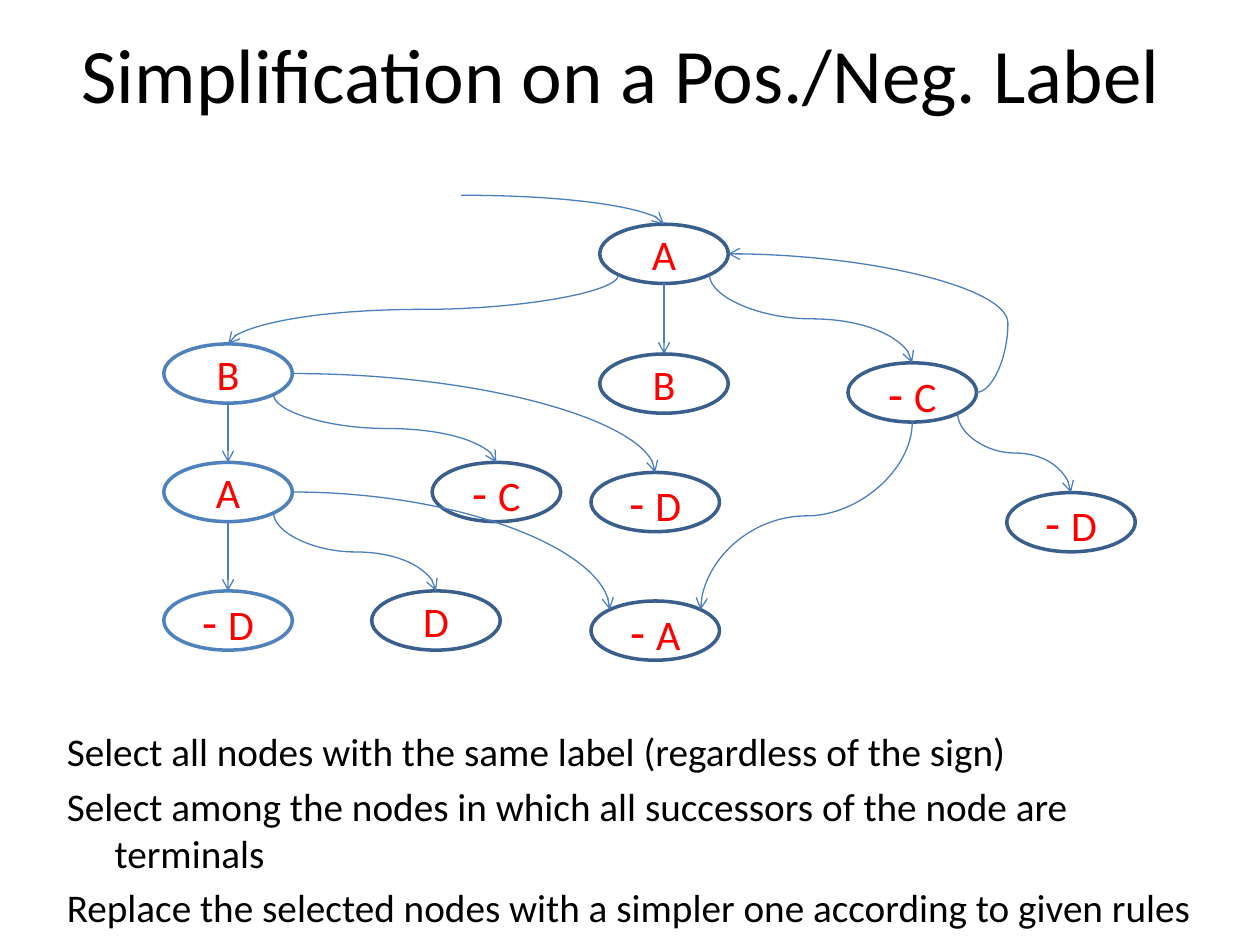
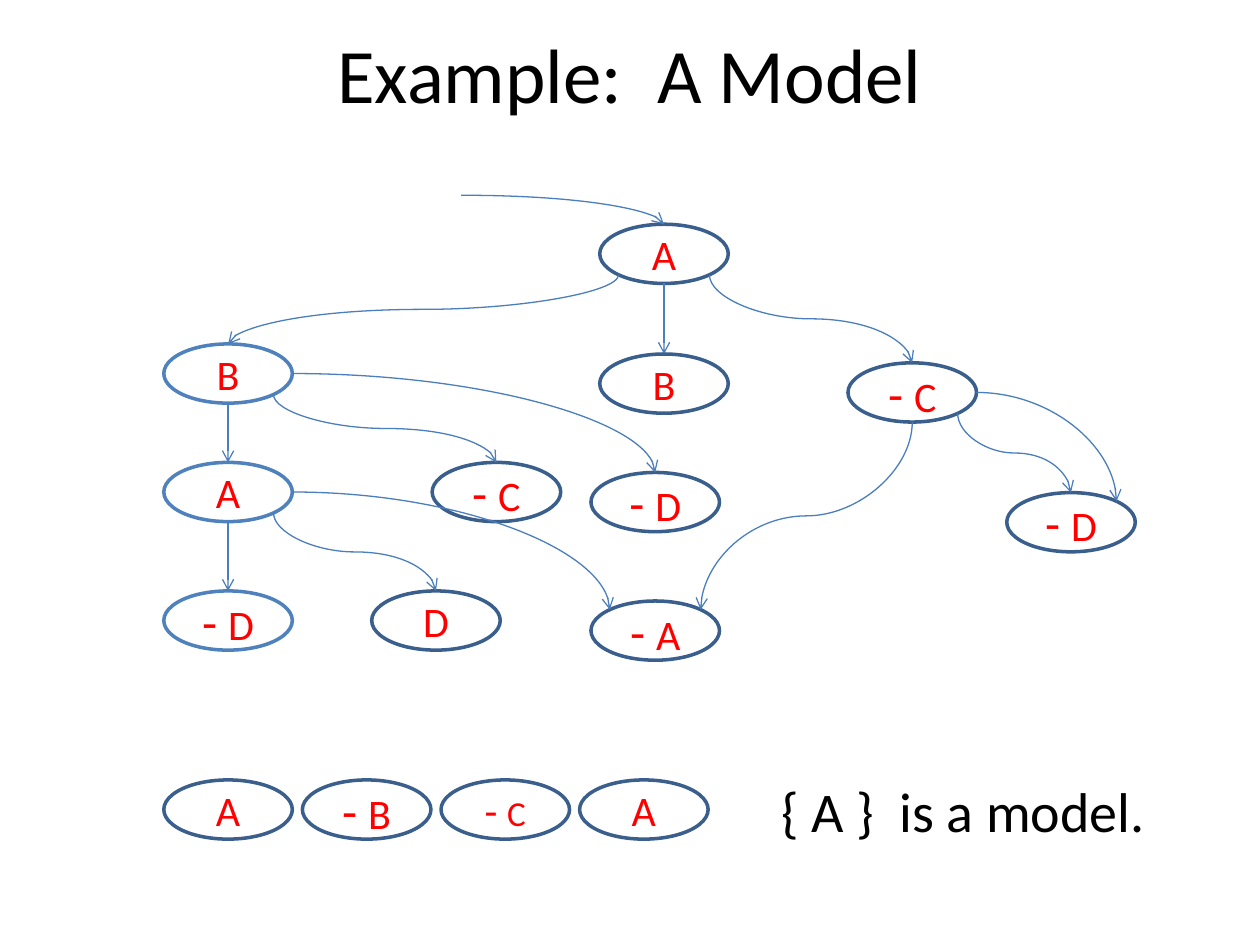
from math import sqrt
from pptx import Presentation
from pptx.dml.color import RGBColor
from pptx.enum.shapes import MSO_CONNECTOR, MSO_SHAPE
from pptx.enum.text import MSO_ANCHOR, MSO_AUTO_SIZE, PP_ALIGN
from pptx.oxml.ns import qn
from pptx.util import Inches, Pt
from lxml.etree import SubElement

COLORS = {
    "white": "FFFFFF",
    "black": "000000",
    "label": "FF0000",
    "edge": "4B7EBC",
    "node": "3A5F8C",
    "left_node": "4F81BD",
}
FONT = "Calibri"
NODE_W, NODE_H = 1.02, 0.47
TREE_BOX = (1.3, 1.55)
CHAIN_BOX = (1.3, 6.19)
CHAIN_STEP = 1.1

NODES = {
    "root": ("A", 3.46, 0.23),
    "mid_b": ("B", 3.46, 1.26),
    "right_c": ("- C", 5.43, 1.33),
    "left_b": ("B", 0, 1.18),
    "mid_c": ("- C", 2.13, 2.12),
    "left_a": ("A", 0, 2.12),
    "low_d": ("D", 1.65, 3.14),
    "left_d": ("- D", 0, 3.14),
    "right_d": ("- D", 6.69, 2.36),
    "low_a": ("- A", 3.39, 3.22),
    "mid_d": ("- D", 3.39, 2.2),
}
DIAGONAL = 1 / sqrt(2)
PORTS = {
    "top": (0, -1),
    "bottom": (0, 1),
    "right": (1, 0),
    "top_left": (-DIAGONAL, -DIAGONAL),
    "top_right": (DIAGONAL, -DIAGONAL),
    "bottom_left": (-DIAGONAL, DIAGONAL),
    "bottom_right": (DIAGONAL, DIAGONAL),
}
S_CURVES = [
    ("root", "bottom", "mid_b", "top"),
    ("root", "bottom_right", "right_c", "top"),
    ("root", "bottom_left", "left_b", "top"),
    ("left_b", "bottom", "left_a", "top"),
    ("left_a", "bottom", "left_d", "top"),
    ("left_a", "bottom_right", "low_d", "top"),
    ("left_b", "bottom_right", "mid_c", "top"),
    ("right_c", "bottom", "low_a", "top_right"),
    ("right_c", "bottom_right", "right_d", "top"),
]
ARCS = [
    ("left_a", "right", "low_a", "top_left"),
    ("left_b", "right", "mid_d", "top"),
]


def rgb(name):
    return RGBColor.from_string(COLORS[name])


def add_run(p, text, size, color="black"):
    r = p.add_run()
    r.text = text
    r.font.name = FONT
    r.font.size = Pt(size)
    r.font.color.rgb = rgb(color)


def place(sp, left, top, width, height):
    sp.left, sp.top = Inches(left), Inches(top)
    sp.width, sp.height = Inches(width), Inches(height)


def add_slide(prs, title):
    s = prs.slides.add_slide(prs.slide_layouts[1])
    s.background.fill.solid()
    s.background.fill.fore_color.rgb = rgb("white")
    sp = s.shapes.title
    place(sp, 0.5, 0, 9, 1.15)
    tf = sp.text_frame
    tf.auto_size = MSO_AUTO_SIZE.NONE
    tf.vertical_anchor = MSO_ANCHOR.MIDDLE
    p = tf.paragraphs[0]
    p.alignment = PP_ALIGN.CENTER
    add_run(p, title, 44)
    return s


def add_body(s, box, lines, size):
    sp = s.placeholders[1]
    place(sp, *box)
    tf = sp.text_frame
    tf.word_wrap = True
    tf.auto_size = MSO_AUTO_SIZE.NONE
    for i, line in enumerate(lines):
        p = tf.add_paragraph() if i else tf.paragraphs[0]
        pPr = p._p.get_or_add_pPr()
        pPr.set("marL", str(Inches(0.38)))
        pPr.set("indent", str(Inches(-0.38)))
        SubElement(pPr, qn("a:buNone"))
        add_run(p, line, size)


def add_node(s, left, top, label, line="node", size=24):
    sp = s.shapes.add_shape(MSO_SHAPE.OVAL, Inches(left), Inches(top),
                            Inches(NODE_W), Inches(NODE_H))
    sp.shadow.inherit = False
    sp.fill.solid()
    sp.fill.fore_color.rgb = rgb("white")
    sp.line.color.rgb = rgb(line)
    sp.line.width = Pt(2)
    tf = sp.text_frame
    tf.vertical_anchor = MSO_ANCHOR.MIDDLE
    p = tf.paragraphs[0]
    p.alignment = PP_ALIGN.CENTER
    if label.startswith("- "):
        add_run(p, "- ", size + 4, "label")
    add_run(p, label[-1], size, "label")


def add_curve(s, start, end):
    c = s.shapes.add_connector(MSO_CONNECTOR.CURVE, *map(Inches, start + end))
    c.line.color.rgb = rgb("edge")
    c.line.width = Pt(0.75)
    SubElement(c.line._get_or_add_ln(), qn("a:tailEnd"), type="arrow")
    SubElement(c._element.spPr, qn("a:effectLst"))
    return c


def add_s_curve(s, start, end):
    c = add_curve(s, start, end)
    (x1, y1), (x2, y2) = start, end
    width, height = y2 - y1, abs(x2 - x1)
    place(c, (x1 + x2 - width) / 2, (y1 + y2 - height) / 2, width, height)
    rightward = x2 > x1
    xfrm = c._element.spPr.find(qn("a:xfrm"))
    xfrm.set("rot", str((270 if rightward else 90) * 60000))
    xfrm.set("flipH", "1" if rightward else "0")


def add_arc(s, start, end):
    c = add_curve(s, start, end)
    c._element.spPr.find(qn("a:prstGeom")).set("prst", "curvedConnector2")


def add_loop(s, start, end):
    c = add_curve(s, start, end)
    geom = c._element.spPr.find(qn("a:prstGeom"))
    SubElement(geom.find(qn("a:avLst")), qn("a:gd"),
               name="adj1", fmla="val -12700")


def add_tree(s, box):
    left, top = box

    def port(node, side):
        _, x, y = NODES[node]
        dx, dy = PORTS[side]
        return (left + x + NODE_W / 2 * (1 + dx),
                top + y + NODE_H / 2 * (1 + dy))

    for label, x, y in NODES.values():
        add_node(s, left + x, top + y, label, "node" if x else "left_node")
    for source, out, target, into in S_CURVES:
        add_s_curve(s, port(source, out), port(target, into))
    for source, out, target, into in ARCS:
        add_arc(s, port(source, out), port(target, into))
    add_arc(s, (left + 2.36, top), port("root", "top"))
    return port


def add_chain(s, box):
    left, top = box
    for i, (label, size) in enumerate(
            [("A", 24), ("- B", 24), ("- C", 20), ("A", 24)]):
        add_node(s, left + i * CHAIN_STEP, top, label, size=size)


def simplification_slide(prs):
    s = add_slide(prs, "Simplification on a Pos./Neg. Label ")
    port = add_tree(s, TREE_BOX)
    x, y = port("root", "right")
    add_loop(s, port("right_c", "right"), (x, y))
    add_body(s, (0.43, 5.72, 9.29, 1.26), [
        "Select all nodes with the same label (regardless of the sign)",
        "Select among the nodes in which all successors of the node are terminals",
        "Replace the selected nodes with a simpler one according to given rules",
    ], 22.4)


def model_slide(prs):
    s = add_slide(prs, "Example:  A Model")
    port = add_tree(s, TREE_BOX)
    add_arc(s, port("right_c", "right"), port("right_d", "top_right"))
    add_chain(s, CHAIN_BOX)
    add_body(s, (6.1, 6.11, 3.15, 0.63), ["{ A }  is a model."], 32)


def main():
    prs = Presentation()
    prs.slide_width, prs.slide_height = Inches(10), Inches(7.5)
    simplification_slide(prs)
    model_slide(prs)
    prs.save("out.pptx")


if __name__ == "__main__":
    main()
